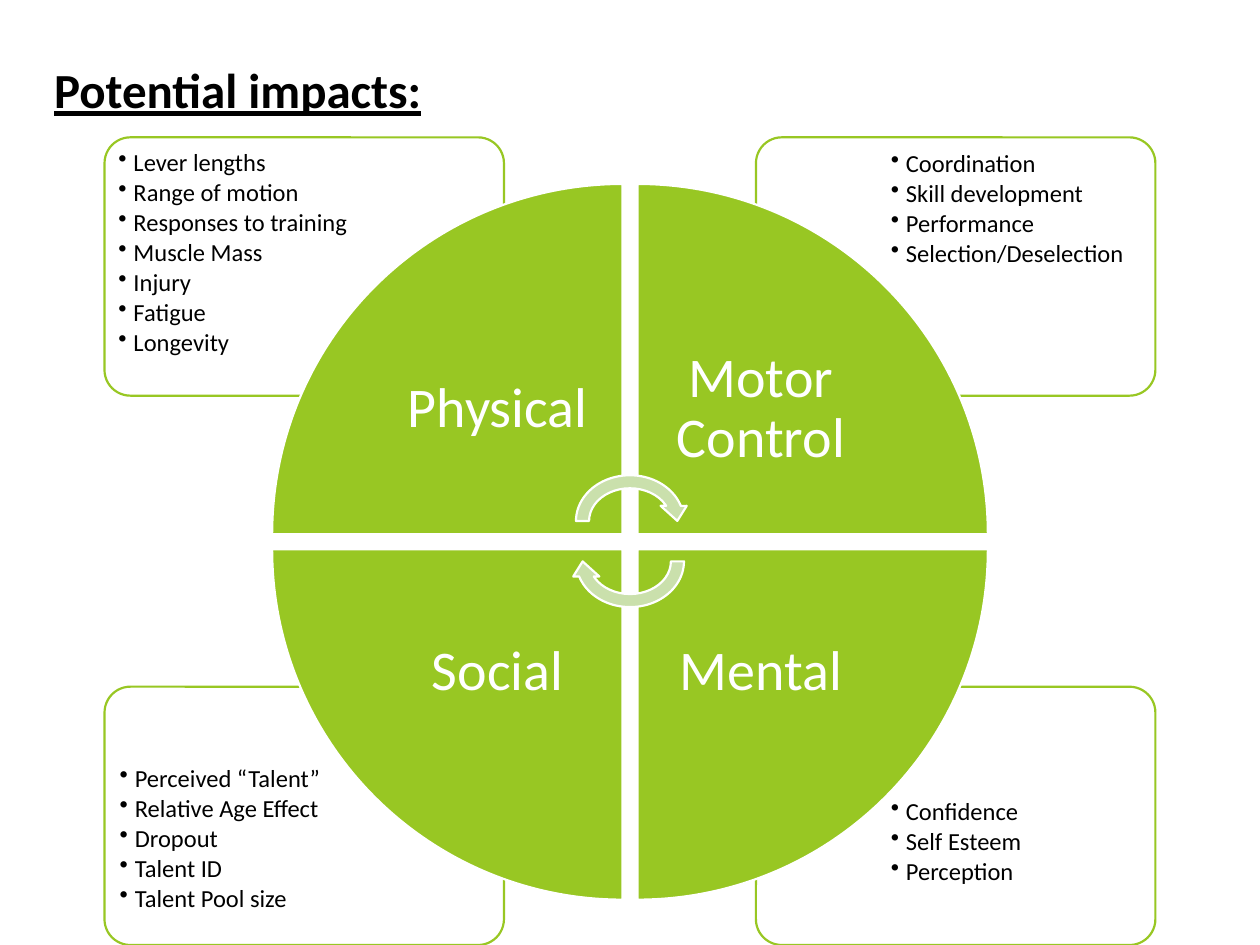
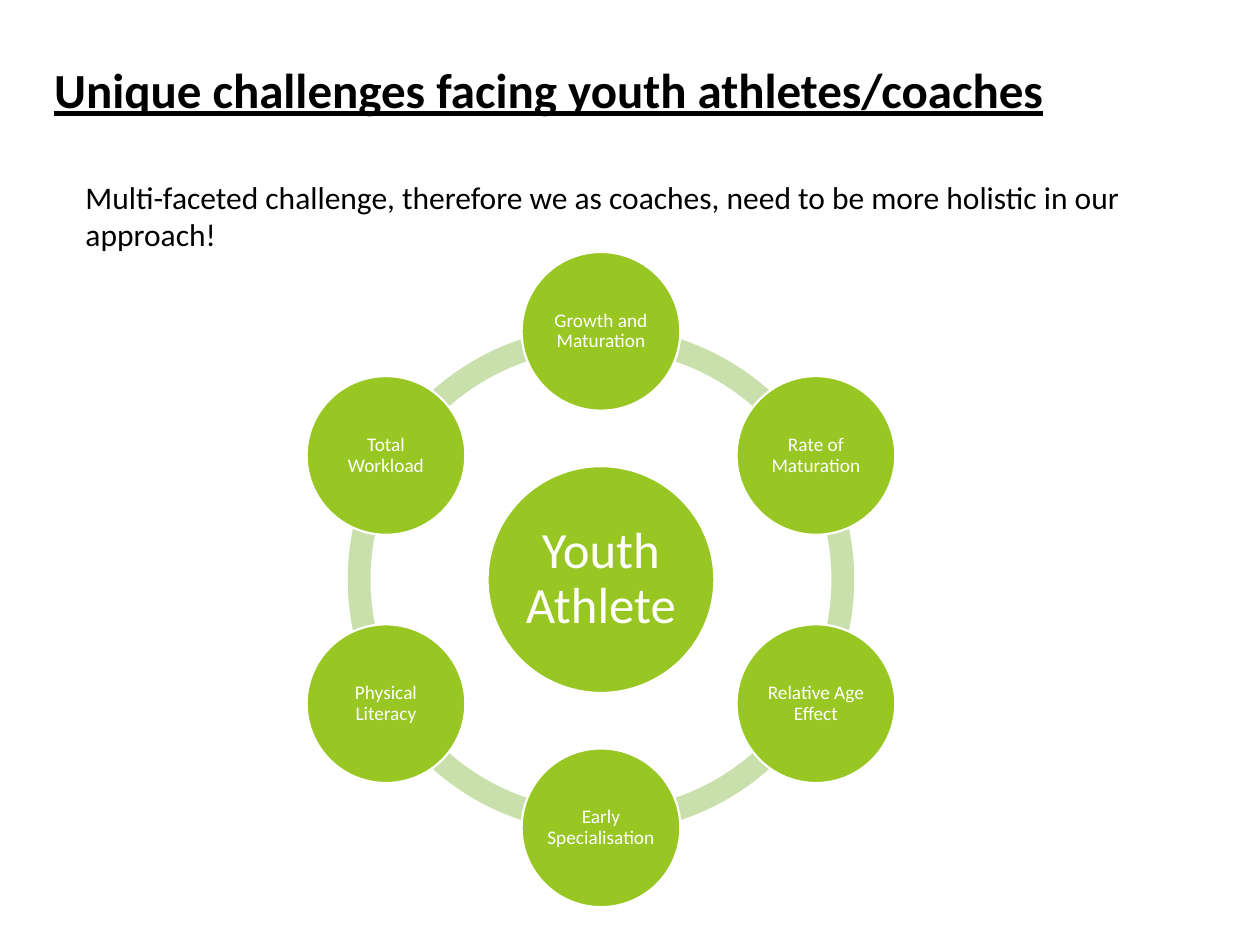
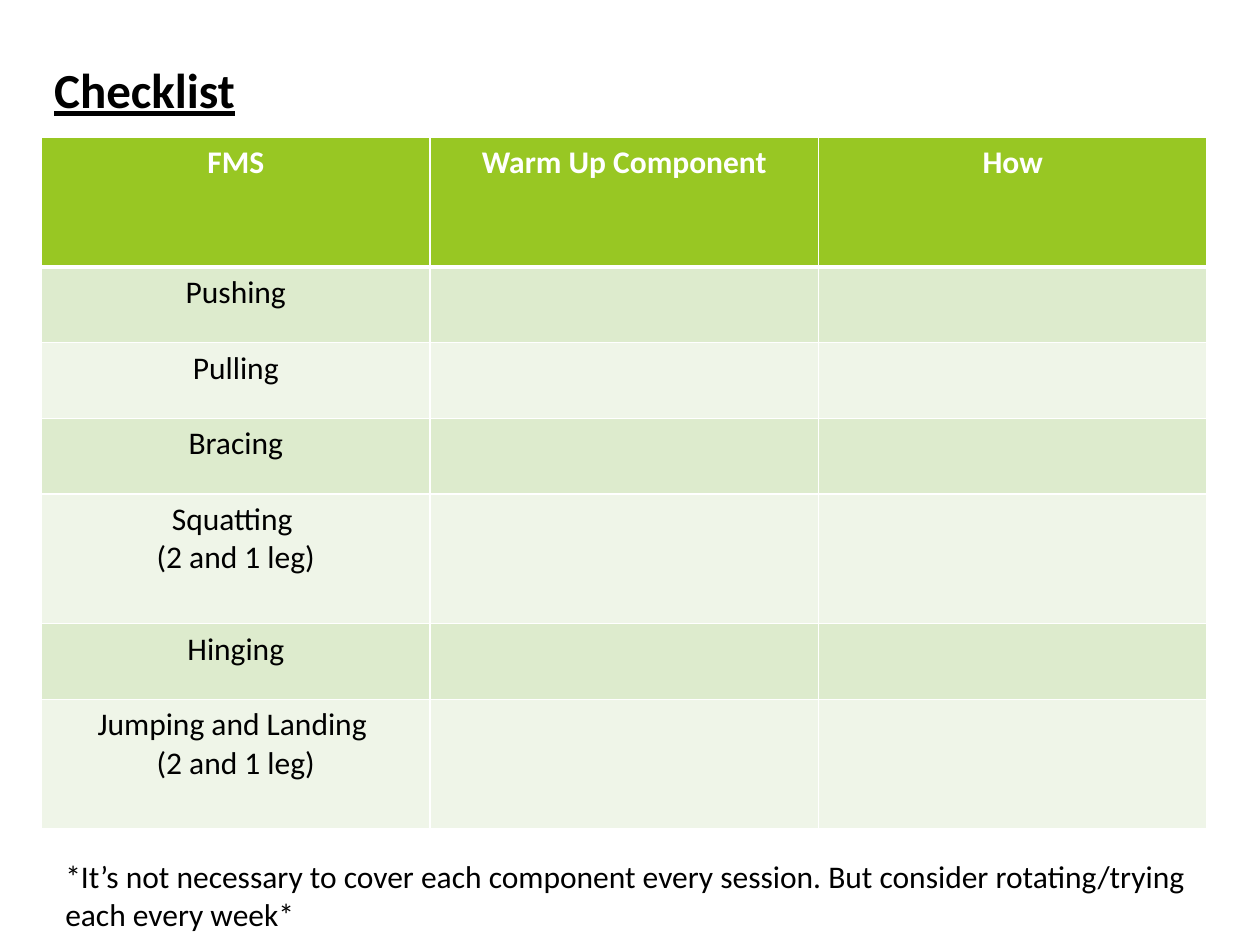
from math import cos, radians, sin

from lxml.etree import SubElement
from pptx import Presentation
from pptx.dml.color import RGBColor as Rgb
from pptx.enum.shapes import MSO_SHAPE as Kind
from pptx.enum.text import MSO_ANCHOR as Anchor, MSO_AUTO_SIZE as Fit, PP_ALIGN as Align
from pptx.oxml.ns import qn
from pptx.util import Inches, Pt

FONT = "Calibri"
HUES = {
    "green": "98C723",
    "pale": "CAE0AC",
    "band": "DDEBCD",
    "light": "EFF5E8",
    "white": "FFFFFF",
    "black": "000000",
}


def hue(name):
    return Rgb.from_string(HUES[name])


def write(frame, text, size=18, color="black", bold=False, under=False,
          align=Align.LEFT, anchor=Anchor.TOP, inset=None, lead=None,
          after=0, bullet=False):
    """Fill a text frame, one paragraph for each line of text."""
    frame.word_wrap = True
    frame.auto_size = Fit.NONE
    frame.vertical_anchor = anchor
    if inset is not None:
        frame.margin_left = frame.margin_right = Inches(inset)
        frame.margin_top = frame.margin_bottom = Inches(inset)
    for i, line in enumerate(text.split("\n")):
        para = frame.add_paragraph() if i else frame.paragraphs[0]
        para.alignment = align
        para.space_before, para.space_after = Pt(0), Pt(after)
        if lead:
            para.line_spacing = lead
        if bullet:
            props = para._p.get_or_add_pPr()
            props.set("marL", str(Inches(0.12)))
            props.set("indent", str(-Inches(0.12)))
            SubElement(props, qn("a:buChar"), char="•")
        run = para.add_run()
        run.text = line
        font = run.font
        font.name, font.size = FONT, Pt(size)
        font.bold, font.underline = bold, under
        font.color.rgb = hue(color)


class Deck:
    def __init__(self):
        self.prs = Presentation()
        self.prs.slide_width, self.prs.slide_height = Inches(10), Inches(7.5)
        self.slide = None

    def page(self, title):
        self.slide = self.prs.slides.add_slide(self.prs.slide_layouts[5])
        head = self.slide.shapes.title
        head.left, head.top = Inches(0.33), Inches(0.42)
        head.width, head.height = Inches(9.25), Inches(1.35)
        write(head.text_frame, title, size=28, bold=True, under=True)

    def text(self, x, y, w, h, text, **fmt):
        box = self.slide.shapes.add_textbox(Inches(x), Inches(y), Inches(w), Inches(h))
        write(box.text_frame, text, **fmt)

    def shape(self, kind, x, y, w, h, fill="green", line="white", turn=0, adj=()):
        item = self.slide.shapes.add_shape(kind, Inches(x), Inches(y), Inches(w), Inches(h))
        item.shadow.inherit = False
        item.fill.solid()
        item.fill.fore_color.rgb = hue(fill)
        if line:
            item.line.color.rgb = hue(line)
            item.line.width = Pt(1.25)
        else:
            item.line.fill.background()
        item.rotation = turn
        for i, value in enumerate(adj):
            item.adjustments[i] = value
        return item

    def disc(self, x, y, wide, text, **fmt):
        item = self.shape(Kind.OVAL, x - wide / 2, y - wide / 2, wide, wide)
        write(item.text_frame, text, color="white", align=Align.CENTER,
              anchor=Anchor.MIDDLE, lead=0.9, **fmt)

    def table(self, x, y, width, highs, rows):
        cols = len(rows[0])
        grid = self.slide.shapes.add_table(
            len(rows), cols, Inches(x), Inches(y), Inches(width), Inches(sum(highs))).table
        for col in grid.columns:
            col.width = Inches(width / cols)
        for r, row in enumerate(rows):
            grid.rows[r].height = Inches(highs[r])
            for c, text in enumerate(row):
                cell = grid.cell(r, c)
                self.edge(cell, top=3 if r == 1 else 1, low=1 if r else 3)
                cell.fill.solid()
                cell.fill.fore_color.rgb = hue(
                    "green" if r == 0 else "band" if r % 2 else "light")
                if text:
                    write(cell.text_frame, text, align=Align.CENTER, bold=r == 0,
                          color="black" if r else "white")

    def edge(self, cell, top, low):
        props = cell._tc.get_or_add_tcPr()
        for side, width in (("L", 1), ("R", 1), ("T", top), ("B", low)):
            line = SubElement(props, qn(f"a:ln{side}"), w=str(Pt(width)))
            fill = SubElement(line, qn("a:solidFill"))
            SubElement(fill, qn("a:srgbClr"), val=HUES["white"])


def impacts(deck):
    deck.page("Potential impacts:")

    # Corner cards: right side, lower half, list top, items
    cards = [
        (1, 1, 6.27, "Confidence\nSelf Esteem\nPerception"),
        (0, 1, 6.01, "Perceived “Talent”\nRelative Age Effect\nDropout\nTalent ID\n"
                     "Talent Pool size"),
        (1, 0, 1.13, "Coordination\nSkill development\nPerformance\nSelection/Deselection"),
        (0, 0, 1.13, "Lever lengths\nRange of motion\nResponses to training\nMuscle Mass\n"
                     "Injury\nFatigue\nLongevity"),
    ]
    for right, low, top, items in cards:
        deck.shape(Kind.ROUNDED_RECTANGLE, 6 if right else 0.83, 5.45 if low else 1.09,
                   3.17, 2.05, fill="white", line="green", adj=[0.1])
        deck.text(7 if right else 0.88, top, 2.13, 1.45, items, size=14,
                  inset=0.07 if right or low else 0.06, lead=0.9, after=2, bullet=True)

    # Quarter wedges, clockwise from the upper left
    wedges = [(0, 0, "Physical"), (1, 0, "Motor Control"), (1, 1, "Mental"), (0, 1, "Social")]
    for i, (right, low, name) in enumerate(wedges):
        deck.shape(Kind.PIE_WEDGE, 2.16 + 2.9 * right, 1.46 + 2.9 * low,
                   2.78, 2.78, turn=90 * i)
        deck.text(5.06 if right else 2.97, 4.36 if low else 2.27, 1.96, 1.96, name,
                  size=32, color="white", align=Align.CENTER, anchor=Anchor.MIDDLE,
                  inset=0.25, lead=0.9)

    # Cycle arrows
    for y, turn in ((3.72, 0), (4.04, 180)):
        deck.shape(Kind.CIRCULAR_ARROW, 4.52, y, 0.96, 0.83, fill="pale", turn=turn)


def issues(deck):
    deck.page("Unique challenges facing youth athletes/coaches")
    deck.text(0.58, 1.36, 8.75, 2.52, "Multi-faceted challenge, therefore we as coaches, "
              "need to be more holistic in our approach!")
    mid_x, mid_y, reach, ring = 4.77, 4.6, 1.97, 4.02
    names = ["Growth and Maturation", "Rate of Maturation", "Relative Age Effect",
             "Early Specialisation", "Physical Literacy", "Total Workload"]
    step = 360 / len(names)
    turns = [(270 + step * i) % 360 for i in range(len(names))]

    # Ring of arcs; an angle adjustment counts 0.6 per degree
    for turn in turns:
        deck.shape(Kind.BLOCK_ARC, mid_x - ring / 2, mid_y - ring / 2, ring, ring,
                   fill="pale", line=None,
                   adj=[turn * 0.6, (turn + step) % 360 * 0.6, 0.045])

    # Hub and the discs around it
    deck.disc(mid_x, mid_y, 1.8, "Youth Athlete", size=29, inset=0.04)
    for turn, name in zip(turns, names):
        deck.disc(mid_x + reach * cos(radians(turn)), mid_y + reach * sin(radians(turn)),
                  1.26, name, size=11, inset=0.02)


def checks(deck):
    deck.page("Checklist")
    skills = ["Pushing", "Pulling", "Bracing", "Squatting \n(2 and 1 leg)", "Hinging",
              "Jumping and Landing \n(2 and 1 leg)"]
    rows = [["FMS", "Warm Up Component", "How"]] + [[skill, "", ""] for skill in skills]
    highs = [1.03] + [1.03 if "\n" in skill else 0.6 for skill in skills]
    deck.table(0.33, 1.09, 9.25, highs, rows)
    deck.text(0.42, 6.75, 9.17, 0.71, "*It’s not necessary to cover each component every "
              "session. But consider rotating/trying each every week*")


def main():
    deck = Deck()
    for build in (impacts, issues, checks):
        build(deck)
    deck.prs.save("out.pptx")


if __name__ == "__main__":
    main()
